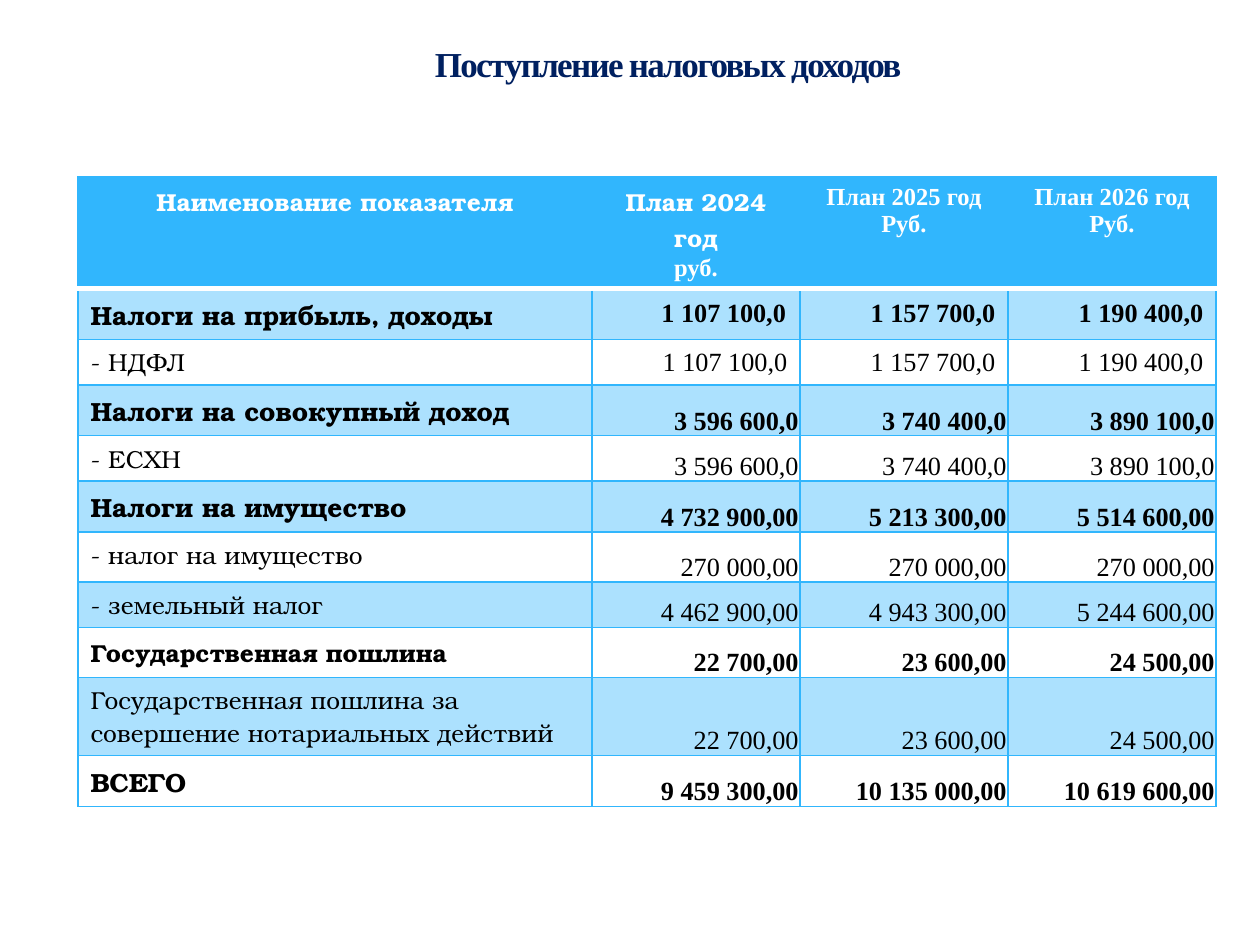
from dataclasses import dataclass

from lxml import etree
from pptx import Presentation
from pptx import util as u
from pptx.dml import color
from pptx.enum import text
from pptx.oxml import ns

PX = 914400 / 126
SKY, WHITE, BLACK, NAVY, PALE = "31B6FD", "FFFFFF", "000000", "002060", "AFCCDE"
SERIF, BONUM = "Times New Roman", "TeX Gyre Bonum"
CENTER, RIGHT, LEFT = text.PP_ALIGN.CENTER, text.PP_ALIGN.RIGHT, text.PP_ALIGN.LEFT
TIGHT = dict(margin_left=u.Inches(0.01), margin_right=u.Inches(0.01),
             margin_top=u.Inches(0.01), margin_bottom=0,
             vertical_anchor=text.MSO_ANCHOR.BOTTOM)
MIDDLE = dict(vertical_anchor=text.MSO_ANCHOR.MIDDLE)


@dataclass
class Income:
    name: str
    plans: tuple[str, str, str]
    height: int
    bold: bool = False
    name_size: int = 14


@dataclass
class Line:
    words: str
    font: str
    size: int
    bold: bool
    hue: str
    align: int


HEADER_HEIGHT = 69
COLUMN_WIDTHS = (514, 208, 208, 208)
HEADINGS = (
    (("Наименование показателя", BONUM),),
    (("План 2024 год", BONUM), ("руб.", SERIF)),
    (("План 2025 год", SERIF), ("Руб.", SERIF)),
    (("План 2026 год", SERIF), ("Руб.", SERIF)),
)
INCOMES = (
    Income("Налоги на прибыль, доходы", ("1 107 100,0\t", "1 157 700,0", "1 190 400,0"), 50, True, 15),
    Income("- НДФЛ", ("1 107 100,0", "1 157 700,0", "1 190 400,0"), 45),
    Income("Налоги на совокупный доход", ("3 596 600,0", "3 740 400,0", "3 890 100,0"), 48, True, 15),
    Income("- ЕСХН", ("3 596 600,0", "3 740 400,0", "3 890 100,0"), 42),
    Income("Налоги на имущество", ("4 732 900,00", "5 213 300,00", "5 514 600,00"), 43, True, 15),
    Income("- налог на имущество", ("270 000,00", "270 000,00", "270 000,00"), 50),
    Income("- земельный налог", ("4 462 900,00", "4 943 300,00", "5 244 600,00"), 43),
    Income("Государственная пошлина", ("22 700,00", "23 600,00", "24 500,00"), 50, True),
    Income("Государственная пошлина за совершение нотариальных действий",
           ("22 700,00", "23 600,00", "24 500,00"), 69),
    Income("ВСЕГО", ("9 459 300,00", "10 135 000,00", "10 619 600,00"), 50, True, 15),
)


def px(length: int) -> int:
    return round(length * PX)


def rgb(value: str) -> color.RGBColor:
    return color.RGBColor.from_string(value)


def apply(target, values: dict) -> None:
    for key, value in values.items():
        setattr(target, key, value)


def solid(parent, hue: str, alpha: int = 100) -> None:
    fill = etree.SubElement(parent, ns.qn("a:solidFill"))
    tint = etree.SubElement(fill, ns.qn("a:srgbClr"), val=hue)
    if alpha < 100:
        etree.SubElement(tint, ns.qn("a:alpha"), val=str(alpha * 1000))


def write(frame, lines: list[Line]) -> None:
    for index, line in enumerate(lines):
        paragraph = frame.add_paragraph() if index else frame.paragraphs[0]
        paragraph.alignment = line.align
        run = paragraph.add_run()
        run.text = line.words
        apply(run.font, dict(name=line.font, size=u.Pt(line.size), bold=line.bold))
        run.font.color.rgb = rgb(line.hue)


def style_cell(cell, borders: dict, hue: str = "", alpha: int = 100) -> None:
    properties = cell._tc.get_or_add_tcPr()
    for side, (border_hue, points) in borders.items():
        edge = etree.SubElement(properties, ns.qn(f"a:ln{side}"), w=str(u.Pt(points)))
        solid(edge, border_hue)
    if hue:
        solid(properties, hue, alpha)
    else:
        cell.fill.background()


def draw_title(slide) -> None:
    title = slide.shapes.add_textbox(px(207), px(29), px(922), px(69))
    frame = title.text_frame
    apply(frame, dict(word_wrap=True, **MIDDLE))
    write(frame, [Line("Поступление налоговых доходов", SERIF, 20, True, NAVY, CENTER)])
    properties = frame.paragraphs[0].runs[0].font._element
    properties.set("spc", "-100")
    outline = etree.Element(ns.qn("a:ln"), w=str(u.Pt(0.25)))
    solid(outline, PALE, 25)
    properties.insert(0, outline)


def draw_incomes(slide) -> None:
    heights = [HEADER_HEIGHT, *(income.height for income in INCOMES)]
    table = slide.shapes.add_table(
        len(heights), len(COLUMN_WIDTHS), px(78), px(177),
        px(sum(COLUMN_WIDTHS)), px(sum(heights))).table
    for column, width in zip(table.columns, COLUMN_WIDTHS):
        column.width = px(width)
    for row, height in zip(table.rows, heights):
        row.height = px(height)

    thin = (SKY, 1)
    header_borders = dict(L=thin, R=thin, T=thin, B=(WHITE, 3))
    for column, heading in enumerate(HEADINGS):
        cell = table.cell(0, column)
        write(cell.text_frame, [Line(words, font, 14, True, WHITE, CENTER) for words, font in heading])
        style_cell(cell, header_borders, SKY)

    for row, income in enumerate(INCOMES, 1):
        top = (WHITE, 3) if row == 1 else thin
        borders = dict(L=thin, R=thin, T=top, B=thin)
        name = Line(income.name, BONUM, income.name_size, income.bold, BLACK, LEFT)
        plans = [Line(plan, SERIF, 15, income.bold, BLACK, RIGHT) for plan in income.plans]
        for column, line in enumerate([name, *plans]):
            cell = table.cell(row, column)
            write(cell.text_frame, [line])
            if column:
                apply(cell, MIDDLE if row < 3 else TIGHT)
            style_cell(cell, borders, SKY if row % 2 else "", 40)


def main() -> None:
    deck = Presentation()
    apply(deck, dict(slide_width=px(1260), slide_height=px(945)))
    slide = deck.slides.add_slide(deck.slide_layouts[6])
    draw_incomes(slide)
    draw_title(slide)
    deck.save("out.pptx")


if __name__ == "__main__":
    main()
